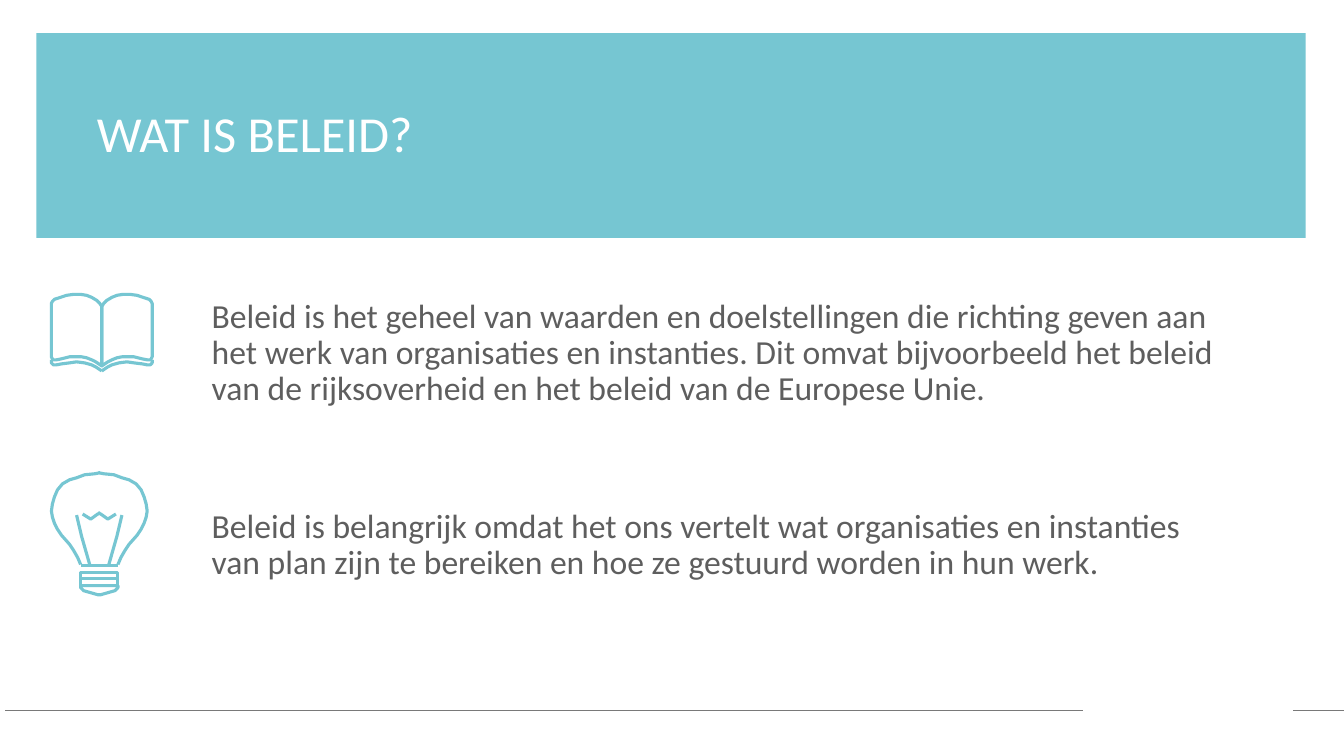
from lxml import etree
from pptx import Presentation
from pptx import util as u
from pptx.dml.color import RGBColor
from pptx.enum import shapes, text
from pptx.oxml.ns import qn

PX = 9144  # EMU: 100 px to the inch
TEAL = RGBColor(0x76, 0xC6, 0xD2)
GREY = RGBColor(0x5E, 0x5E, 0x5E)
RULE = RGBColor(0x79, 0x79, 0x79)
WHITE = RGBColor(0xFF, 0xFF, 0xFF)

TITLE = "WAT IS BELEID?"
ITEMS = [
    "Beleid is het geheel van waarden en doelstellingen die richting geven aan "
    "het werk van organisaties en instanties. Dit omvat bijvoorbeeld het beleid "
    "van de rijksoverheid en het beleid van de Europese Unie.",
    "Beleid is belangrijk omdat het ons vertelt wat organisaties en instanties "
    "van plan zijn te bereiken en hoe ze gestuurd worden in hun werk.",
]

# Left halves of the icons; the right halves are mirrored.
PAGE = [(101, 304), (101, 363), (95, 359), (91, 357), (86, 355), (81, 354),
        (76, 354), (69, 354), (61, 356), (56, 357), (53, 357), (52, 356),
        (51, 354), (51, 301), (52, 299), (54, 297), (60, 295), (66, 293),
        (73, 292), (80, 292), (86, 293), (91, 295), (96, 298), (99, 301)]
EDGE = [(51, 357), (51, 360), (53, 362), (56, 362), (61, 361), (69, 360),
        (76, 359), (84, 360), (91, 362), (95, 364), (101, 368)]
GLASS = [(80, 560), (77, 553), (73, 546), (69, 540), (61, 531), (57, 525),
         (54, 519), (52, 513), (51, 507), (52, 500), (54, 493), (57, 486),
         (62, 480), (69, 476), (76, 474), (84, 471), (94, 470), (99, 469)]
STEM = [(89, 560), (81, 532), (76, 511)]
COIL = [(82, 510), (90, 515), (97, 510), (99, 509)]
TIP = [(80, 581), (80, 583), (83, 586), (97, 590), (99, 590)]


def mirror(pts, total):
    return [(total - x, y) for x, y in pts]


def style(part, color=TEAL, width=2.25):
    """Give an outline its colour and width, with no fill or shadow."""
    part.line.color.rgb = color
    part.line.width = u.Pt(width)
    if hasattr(part, "fill"):
        part.fill.background()
        part.shadow.inherit = False
    else:
        etree.SubElement(part.element.spPr, qn("a:effectLst"))


prs = Presentation()
prs.slide_width, prs.slide_height = 1333 * PX, 750 * PX
slide = prs.slides.add_slide(prs.slide_layouts[1])
title, body = slide.placeholders

# Title band, behind the text
band = slide.shapes.add_shape(shapes.MSO_SHAPE.RECTANGLE,
                              36 * PX, 33 * PX, 1259 * PX, 203 * PX)
band.fill.solid()
band.fill.fore_color.rgb = TEAL
band.line.fill.background()
band.shadow.inherit = False
title.element.addprevious(band.element)

# Title and body text
for box, items, size, color, place in [
    (title, [TITLE], 36, WHITE, (86, 103, 1155, 76)),
    (body, ITEMS, 24, GREY, (200, 292, 1019, 355)),
]:
    box.left, box.top, box.width, box.height = [n * PX for n in place]
    frame = box.text_frame
    frame.text = "\n".join(items)
    frame.word_wrap = True
    frame.auto_size = text.MSO_AUTO_SIZE.NONE
    frame.vertical_anchor = text.MSO_ANCHOR.TOP
    for i, para in enumerate(frame.paragraphs):
        props = para._p.get_or_add_pPr()
        props.set("marL", "0")
        props.set("indent", "0")
        etree.SubElement(props, qn("a:buNone"))
        para.alignment = text.PP_ALIGN.LEFT
        para.line_spacing = 0.9
        para.space_before = u.Pt(72 if i else 0)
        para.font.name = "Calibri"
        para.font.size = u.Pt(size)
        para.font.color.rgb = color

# Footer rule
for start, end in [(1074, 5), (1333, 1282)]:
    rule = slide.shapes.add_connector(shapes.MSO_CONNECTOR.STRAIGHT,
                                      start * PX, 705 * PX, end * PX, 705 * PX)
    style(rule, RULE, 0.5)

# Book and bulb
book = slide.shapes.add_group_shape()
bulb = slide.shapes.add_group_shape()
for group, pts, closed in [
    (book, EDGE, False),
    (book, mirror(EDGE, 202), False),
    (book, PAGE, True),
    (book, mirror(PAGE, 202), True),
    (bulb, TIP + mirror(TIP[::-1], 197), True),
    (bulb, GLASS + mirror(GLASS[::-1], 197), False),
    (bulb, STEM, False),
    (bulb, mirror(STEM, 197), False),
    (bulb, COIL + mirror(COIL[::-1], 197), False),
]:
    path = group.shapes.build_freeform(*pts[0], scale=PX)
    path.add_line_segments(pts[1:], close=closed)
    style(path.convert_to_shape())

for top, high in [(568, 6), (574, 7)]:
    style(bulb.shapes.add_shape(shapes.MSO_SHAPE.RECTANGLE,
                                80 * PX, top * PX, 37 * PX, high * PX))
style(bulb.shapes.add_connector(shapes.MSO_CONNECTOR.STRAIGHT,
                                80 * PX, 561 * PX, 117 * PX, 561 * PX))

prs.save("out.pptx")
